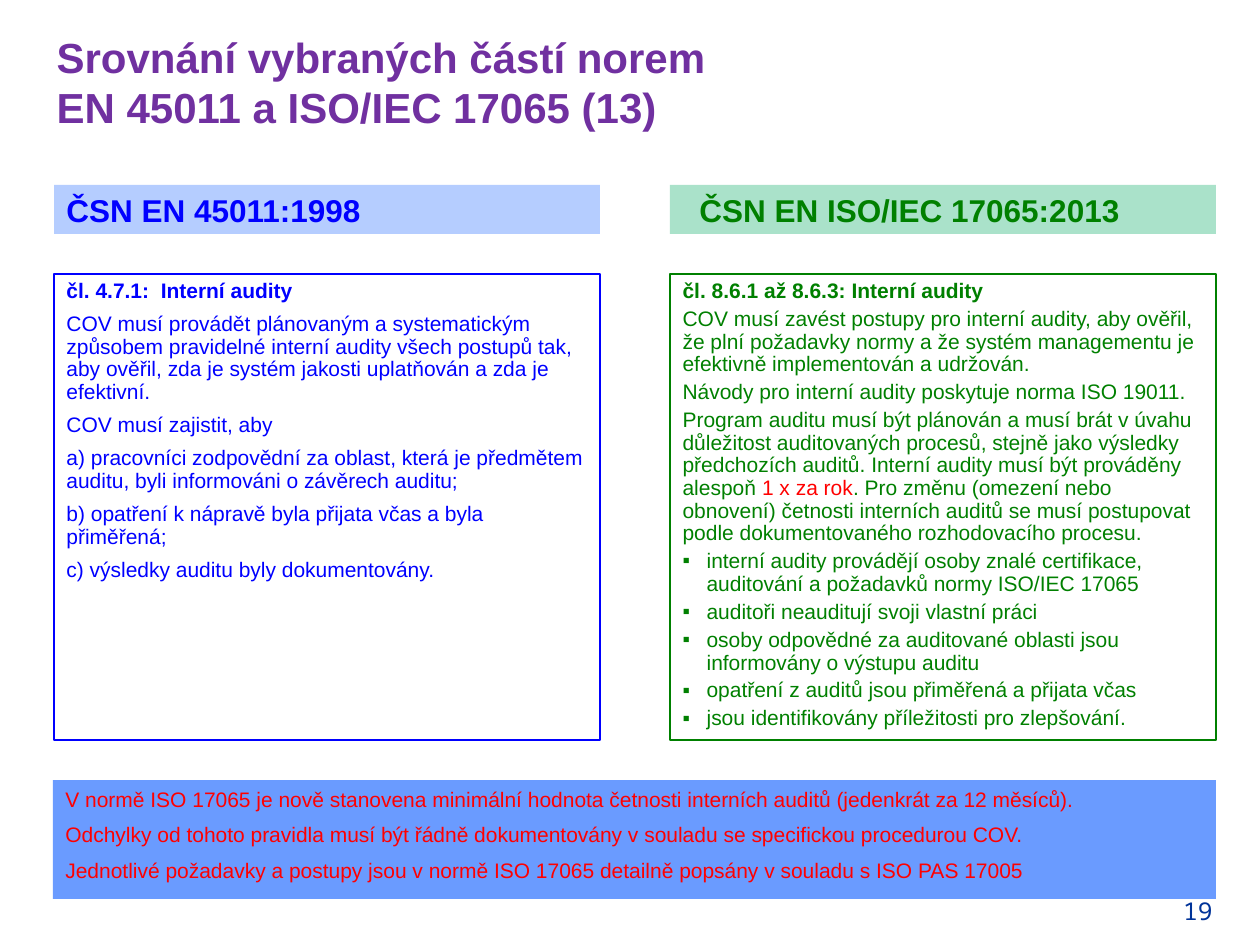
"""Build the slide comparing internal audits in EN 45011 and ISO/IEC 17065."""
from dataclasses import dataclass

from lxml import etree
from pptx import Presentation
from pptx.dml.color import RGBColor
from pptx.enum.shapes import MSO_SHAPE
from pptx.enum.text import MSO_ANCHOR, MSO_AUTO_SIZE, PP_ALIGN
from pptx.oxml.ns import qn
from pptx.util import Emu, Pt

RECTANGLE = MSO_SHAPE.RECTANGLE
TOP, MIDDLE = MSO_ANCHOR.TOP, MSO_ANCHOR.MIDDLE
LEFT, RIGHT = PP_ALIGN.LEFT, PP_ALIGN.RIGHT
NO_FIT = MSO_AUTO_SIZE.NONE
EMU_PER_PX = 914400 / 126


def px(length):
    return Emu(round(length * EMU_PER_PX))


@dataclass(frozen=True)
class Theme:
    font: str = "Arial"
    number_font: str = "Noto Sans Mono"
    title: str = "7030A0"
    old: str = "0000FF"
    old_band: str = "B5CDFF"
    new: str = "008000"
    new_band: str = "AAE2CA"
    accent: str = "FF0000"
    summary_band: str = "6A9BFF"
    number: str = "003399"
    paper: str = "FFFFFF"
    title_size: int = 24
    heading_size: int = 18
    body_size: int = 12
    number_size: int = 14


class SlideBuilder:
    def __init__(self, slide, theme):
        self.slide = slide
        self.theme = theme

    def place(self, shape, box):
        shape.left, shape.top, shape.width, shape.height = map(px, box)

    def prepare(self, shape, anchor=TOP):
        frame = shape.text_frame
        frame.word_wrap = True
        frame.auto_size = NO_FIT
        frame.vertical_anchor = anchor
        return frame

    def style(self, paragraph, size, color, bold=False, font=None, align=LEFT):
        paragraph.alignment = align
        for run in paragraph.runs:
            run.font.name = font or self.theme.font
            run.font.size = Pt(size)
            run.font.bold = bold
            run.font.color.rgb = RGBColor.from_string(color)

    def paint(self, shape, fill, line=None):
        shape.fill.solid()
        shape.fill.fore_color.rgb = RGBColor.from_string(fill)
        if line:
            shape.line.color.rgb = RGBColor.from_string(line)
            shape.line.width = Pt(1)
        else:
            shape.line.fill.background()

    def rectangle(self, box, fill, line=None):
        shape = self.slide.shapes.add_shape(RECTANGLE, *map(px, box))
        shape.shadow.inherit = False
        self.paint(shape, fill, line)
        return shape

    def indent(self, paragraph, margin, hanging=0):
        properties = paragraph._p.get_or_add_pPr()
        properties.set("marL", str(px(margin)))
        properties.set("indent", str(-px(hanging)))
        return properties

    def bullet(self, paragraph):
        properties = self.indent(paragraph, 24, 24)
        etree.SubElement(properties, qn("a:buFont")).set("typeface", self.theme.font)
        etree.SubElement(properties, qn("a:buChar")).set("char", "▪")

    def title(self, box, text):
        shape = self.slide.shapes.title
        self.place(shape, box)
        paragraph = self.prepare(shape, MIDDLE).paragraphs[0]
        paragraph.text = text
        self.style(paragraph, self.theme.title_size, self.theme.title, bold=True)

    def heading(self, box, text, fill, color, margin=0):
        paragraph = self.prepare(self.rectangle(box, fill), MIDDLE).paragraphs[0]
        paragraph.text = text
        self.indent(paragraph, margin)
        self.style(paragraph, self.theme.heading_size, color, bold=True)

    def paragraphs(self, shape, texts, color, gap, spacing=1.0, bold_first=False, bullets=()):
        frame = self.prepare(shape)
        frame.text = "\n".join([*texts, *bullets])
        for index, paragraph in enumerate(frame.paragraphs):
            if index >= len(texts):
                self.bullet(paragraph)
            paragraph.line_spacing = spacing
            paragraph.space_before = Pt(gap if index else 0)
            self.style(paragraph, self.theme.body_size, color, bold_first and index == 0)

    def emphasize(self, paragraph, phrase, base_color):
        before, after = paragraph.text.split(phrase)
        paragraph.text = before
        for text in (phrase, after):
            paragraph.add_run().text = text
        self.style(paragraph, self.theme.body_size, base_color)
        paragraph.runs[1].font.color.rgb = RGBColor.from_string(self.theme.accent)

    def body_placeholder(self, box, fill, line):
        shape = self.slide.placeholders[1]
        self.place(shape, box)
        self.paint(shape, fill, line)
        return shape

    def page_number(self, box, text):
        shape = self.slide.shapes.add_textbox(*map(px, box))
        paragraph = self.prepare(shape).paragraphs[0]
        paragraph.text = text
        theme = self.theme
        self.style(paragraph, theme.number_size, theme.number, font=theme.number_font, align=RIGHT)


OLD_TEXTS = [
    "čl. 4.7.1:  Interní audity",
    "COV musí provádět plánovaným a systematickým způsobem pravidelné interní audity všech "
    "postupů tak, aby ověřil, zda je systém jakosti uplatňován a zda je efektivní.",
    "COV musí zajistit, aby",
    "a) pracovníci zodpovědní za oblast, která je předmětem auditu, byli informováni o závěrech auditu;",
    "b) opatření k nápravě byla přijata včas a byla přiměřená;",
    "c) výsledky auditu byly dokumentovány.",
]
NEW_TEXTS = [
    "čl. 8.6.1 až 8.6.3: Interní audity",
    "COV musí zavést postupy pro interní audity, aby ověřil, že plní požadavky normy a že "
    "systém managementu je efektivně implementován a udržován.",
    "Návody pro interní audity poskytuje norma ISO 19011.",
    "Program auditu musí být plánován a musí brát v úvahu důležitost auditovaných procesů, "
    "stejně jako výsledky předchozích auditů. Interní audity musí být prováděny alespoň "
    "1 x za rok. Pro změnu (omezení nebo obnovení) četnosti interních auditů se musí "
    "postupovat podle dokumentovaného rozhodovacího procesu.",
]
NEW_BULLETS = [
    "interní audity provádějí osoby znalé certifikace, auditování a požadavků normy ISO/IEC 17065",
    "auditoři neauditují svoji vlastní práci",
    "osoby odpovědné za auditované oblasti jsou informovány o výstupu auditu",
    "opatření z auditů jsou přiměřená a přijata včas",
    "jsou identifikovány příležitosti pro zlepšování.",
]
SUMMARY = [
    "V normě ISO 17065 je nově stanovena minimální hodnota četnosti interních auditů (jedenkrát za 12 měsíců).",
    "Odchylky od tohoto pravidla musí být řádně dokumentovány v souladu se specifickou procedurou COV.",
    "Jednotlivé požadavky a postupy jsou v normě ISO 17065 detailně popsány v souladu s ISO PAS 17005",
]


def main():
    theme = Theme()
    presentation = Presentation()
    presentation.slide_width, presentation.slide_height = px(1260), px(945)
    slide = presentation.slides.add_slide(presentation.slide_layouts[0])
    builder = SlideBuilder(slide, theme)
    old_left, new_left, width = 54, 670, 546

    builder.page_number((963, 890, 262, 35), "19")
    builder.title((44, 27, 694, 110), "Srovnání vybraných částí norem\vEN 45011 a ISO/IEC 17065 (13)")

    new_body = builder.body_placeholder((new_left, 274, width, 466), theme.paper, theme.new)
    builder.paragraphs(new_body, NEW_TEXTS, theme.new, 3, 0.9, True, NEW_BULLETS)
    builder.emphasize(new_body.text_frame.paragraphs[3], "1 x za rok", theme.new)

    old_body = builder.rectangle((old_left, 274, width, 466), theme.paper, theme.old)
    builder.paragraphs(old_body, OLD_TEXTS, theme.old, 6, 0.9, True)

    builder.heading((new_left, 185, width, 49), "ČSN EN ISO/IEC 17065:2013", theme.new_band, theme.new, 17)
    builder.heading((old_left, 185, width, 49), "ČSN EN 45011:1998", theme.old_band, theme.old)

    summary = builder.rectangle((53, 780, 1163, 119), theme.summary_band)
    builder.paragraphs(summary, SUMMARY, theme.accent, 6)
    presentation.save("out.pptx")


if __name__ == "__main__":
    main()
